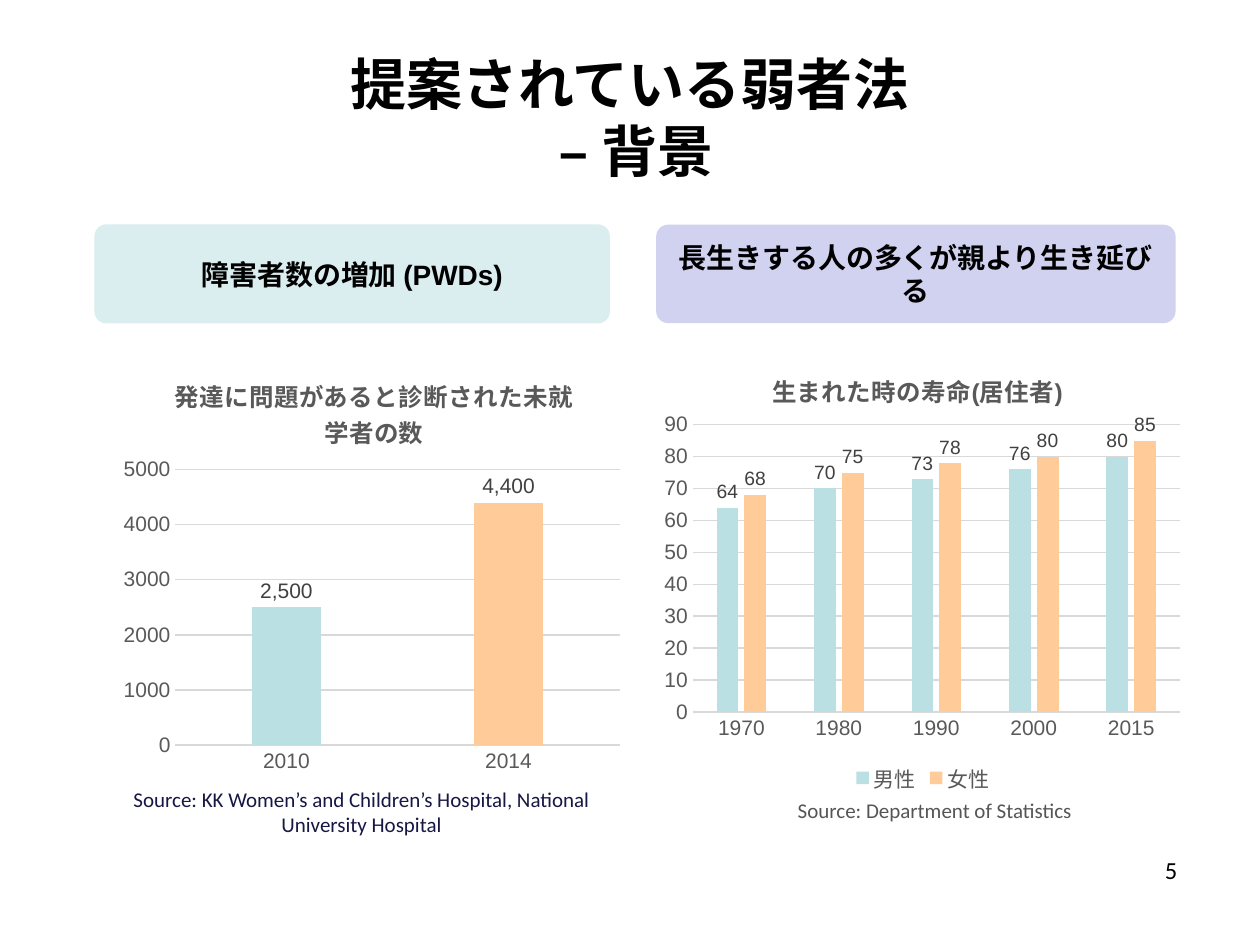
import pptx
import pptx.util
import pptx.chart.data
import pptx.dml.color
import pptx.enum.chart
import pptx.enum.shapes
import pptx.enum.text
import pptx.oxml
import pptx.oxml.ns

Pt = pptx.util.Pt
ALIGN = pptx.enum.text.PP_ALIGN
ANCHOR = pptx.enum.text.MSO_ANCHOR
CHART = pptx.enum.chart

TEAL, PEACH = "BBE0E3", "FFCC99"
GREY, GRID, LABEL = "595959", "D9D9D9", "404040"

TEXTS = [
    ("提案されている弱者法\v – 背景", (36, 21.6, 648, 90),
     dict(size=32, bold=True, anchor=ANCHOR.MIDDLE)),
    ("Source: KK Women’s and Children’s Hospital, National University Hospital",
     (64.8, 445.7, 283.7, 36), dict(size=12, color="171745")),
    ("Source: Department of Statistics", (409.7, 452.2, 249, 21.6),
     dict(size=12, color="555555")),
    ("5", (512, 485.3, 167.8, 37.4), dict(size=14, align=ALIGN.RIGHT)),
]
HEADINGS = [
    ("障害者数の増加 (PWDs)", (54, 128.2, 294.5, 56.6), "DAEDEF"),
    ("長生きする人の多くが親より生き延びる", (375, 128.4, 296.8, 56.2), "D1D1F0"),
]
CHARTS = [
    dict(title="発達に問題があると診断された未就学者の数",
         place=(64.8, 199.4, 295.2, 246.2),
         years=["2010", "2014"],
         series=[("Series 1", [2500, 4400], TEAL)],
         points={1: PEACH}, top=5000, step=1000, label_size=12, legend=False,
         title_at=(0.11, 0.05), plot=(0.12, 0.28, 0.86, 0.64)),
    dict(title="生まれた時の寿命(居住者)",
         place=(374.4, 195.8, 306, 260.6),
         years=["1970", "1980", "1990", "2000", "2015"],
         series=[("男性", [64, 70, 73, 76, 80], TEAL),
                 ("女性", [68, 75, 78, 80, 85], PEACH)],
         points={}, top=90, step=10, label_size=11, legend=True,
         title_at=(0.21, 0.05), plot=(0.07, 0.18, 0.91, 0.63)),
]


def rgb(value):
    return pptx.dml.color.RGBColor.from_string(value)


def paint(target, color):
    target.fill.solid()
    target.fill.fore_color.rgb = rgb(color)


def style(font, size, color, name="Arial", bold=False):
    font.size, font.bold, font.name = Pt(size), bold, name
    font.color.rgb = rgb(color)


def write(box, text, size=12, color="000000", name="Calibri", bold=False,
          align=ALIGN.CENTER, anchor=ANCHOR.TOP):
    frame = box.text_frame
    frame.word_wrap = True
    frame.vertical_anchor = anchor
    para = frame.paragraphs[0]
    para.text = text
    para.alignment = align
    for span in para.runs:
        style(span.font, size, color, name, bold)


def set_layout(parent, index, values, inner=False):
    for old in parent.findall(pptx.oxml.ns.qn("c:layout")):
        parent.remove(old)
    target = '<c:layoutTarget val="inner"/>' if inner else ""
    modes = '<c:xMode val="edge"/><c:yMode val="edge"/>'
    sizes = "".join(f'<c:{key} val="{value}"/>' for key, value in zip("xywh", values))
    parent.insert(index, pptx.oxml.parse_xml(
        f'<c:layout {pptx.oxml.ns.nsdecls("c")}><c:manualLayout>'
        f'{target}{modes}{sizes}</c:manualLayout></c:layout>'))


def add_column_chart(page, item):
    data = pptx.chart.data.CategoryChartData()
    data.categories = item["years"]
    for name, values, color in item["series"]:
        data.add_series(name, values)
    chart = page.shapes.add_chart(CHART.XL_CHART_TYPE.COLUMN_CLUSTERED,
                                  *map(Pt, item["place"]), data).chart
    style(chart.font, 10, "000000")

    chart.has_title = True
    para = chart.chart_title.text_frame.paragraphs[0]
    para.text = item["title"]
    style(para.runs[0].font, 14, GREY, bold=True)
    chart.chart_title.include_in_layout = False
    set_layout(chart.element.find(".//" + pptx.oxml.ns.qn("c:title")), 1, item["title_at"])
    set_layout(chart.element.find(".//" + pptx.oxml.ns.qn("c:plotArea")), 0,
               item["plot"], inner=True)

    for axis in (chart.category_axis, chart.value_axis):
        axis.major_tick_mark = axis.minor_tick_mark = CHART.XL_TICK_MARK.NONE
        style(axis.tick_labels.font, 12, GREY)
    years, scale = chart.category_axis, chart.value_axis
    scale.has_major_gridlines = True
    scale.minimum_scale, scale.maximum_scale = 0, item["top"]
    scale.major_unit = item["step"]
    scale.tick_labels.number_format = "0"
    scale.tick_labels.number_format_is_linked = False
    scale.format.line.fill.background()
    for line in (years.format.line, scale.major_gridlines.format.line):
        line.color.rgb = rgb(GRID)
        line.width = Pt(0.75)

    plot = chart.plots[0]
    plot.gap_width, plot.overlap, plot.vary_by_categories = 219, -27, False
    for series, (name, values, color) in zip(plot.series, item["series"]):
        paint(series.format, color)
        series.invert_if_negative = False
        labels = series.data_labels
        labels.show_value = True
        labels.number_format, labels.number_format_is_linked = "#,##0", False
        labels.position = CHART.XL_LABEL_POSITION.OUTSIDE_END
        style(labels.font, item["label_size"], LABEL)
        for index, point_color in item["points"].items():
            paint(series.points[index].format, point_color)

    chart.has_legend = item["legend"]
    if item["legend"]:
        chart.legend.position = CHART.XL_LEGEND_POSITION.BOTTOM
        chart.legend.include_in_layout = False
        style(chart.legend.font, 12, GREY)


def main():
    deck = pptx.Presentation()
    deck.slide_width, deck.slide_height = Pt(720), Pt(540)
    page = deck.slides.add_slide(deck.slide_layouts[6])
    for item in CHARTS:
        add_column_chart(page, item)
    for text, place, color in HEADINGS:
        box = page.shapes.add_shape(pptx.enum.shapes.MSO_SHAPE.ROUNDED_RECTANGLE,
                                    *map(Pt, place))
        box.adjustments[0] = 0.12
        box.shadow.inherit = False
        paint(box, color)
        box.line.fill.background()
        write(box, text, size=16, name="Arial", bold=True, anchor=ANCHOR.MIDDLE)
    for text, place, options in TEXTS:
        write(page.shapes.add_textbox(*map(Pt, place)), text, **options)
    deck.save("out.pptx")


if __name__ == "__main__":
    main()
